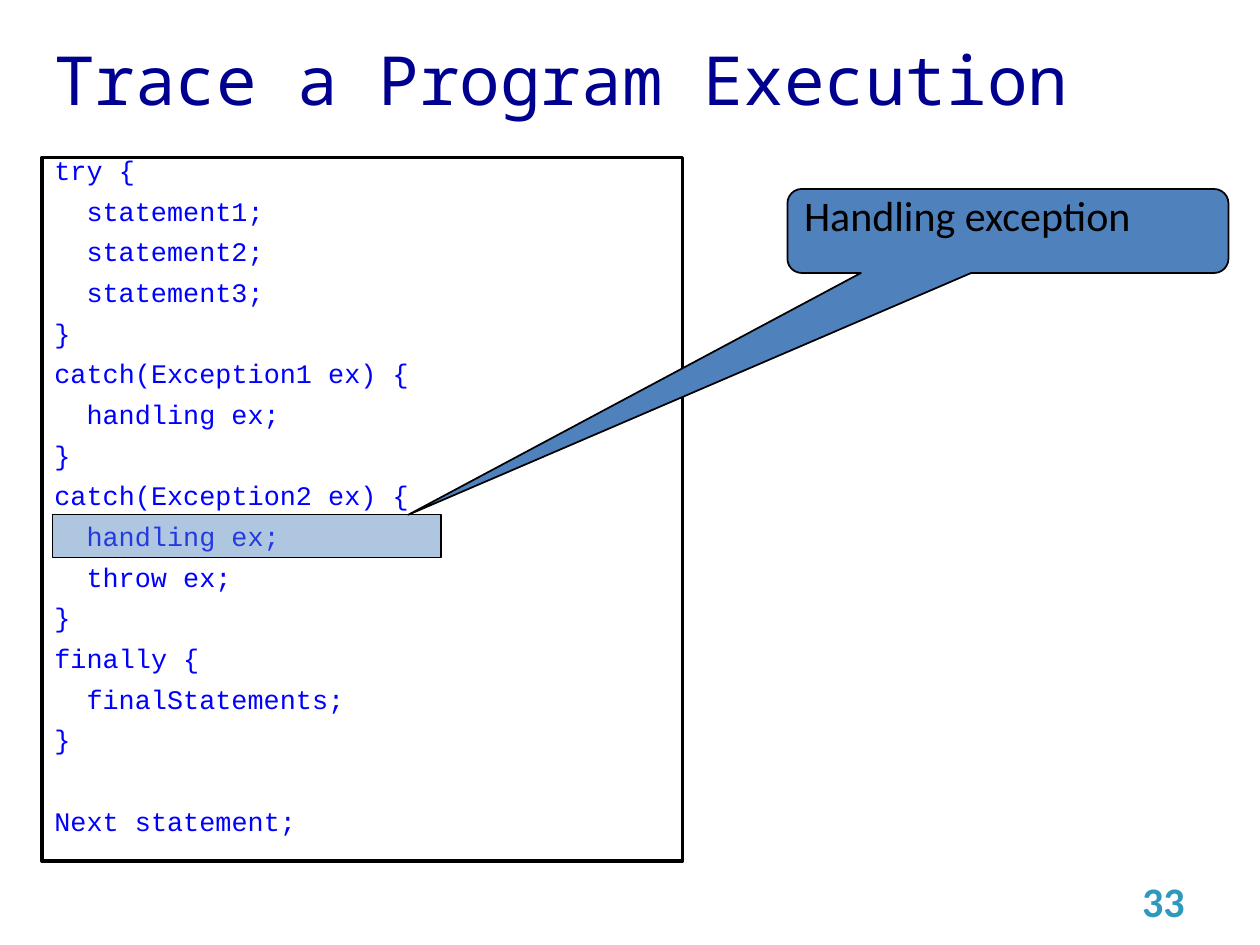
from dataclasses import dataclass

from lxml import etree
from pptx import Presentation
from pptx.dml.color import RGBColor
from pptx.enum.shapes import MSO_SHAPE
from pptx.enum.text import MSO_ANCHOR, PP_ALIGN
from pptx.oxml.ns import qn
from pptx.util import Inches, Pt

RECTANGLE = MSO_SHAPE.RECTANGLE
CALLOUT = MSO_SHAPE.ROUNDED_RECTANGULAR_CALLOUT
TOP, MIDDLE = MSO_ANCHOR.TOP, MSO_ANCHOR.MIDDLE
LEFT, RIGHT = PP_ALIGN.LEFT, PP_ALIGN.RIGHT

# The page is a grid of 120 columns by 90 rows
COLUMNS, ROWS = 120, 90
PAGE_WIDTH, PAGE_HEIGHT = Inches(10), Inches(7.5)

BLACK, WHITE, BLUE = "000000", "FFFFFF", "4F81BD"
CODE_SIZE = 15.3
CODE_SPACING = 0.65
CODE_GAP = 11.3
CODE_PITCH = 23.25
INDENT = 2 * 0.6 * CODE_SIZE  # two monospaced characters


@dataclass(frozen=True)
class Area:
    column: float
    row: float
    columns: float
    rows: float

    def lengths(self) -> tuple[int, int, int, int]:
        across, down = PAGE_WIDTH / COLUMNS, PAGE_HEIGHT / ROWS
        return (round(self.column * across), round(self.row * down),
                round(self.columns * across), round(self.rows * down))


@dataclass(frozen=True)
class CodeLine:
    text: str
    level: int = 0
    blank_lines_after: int = 0


CODE = [
    CodeLine("try {"),
    CodeLine("statement1;", 1),
    CodeLine("statement2;", 1),
    CodeLine("statement3;", 1),
    CodeLine("}"),
    CodeLine("catch(Exception1 ex) {"),
    CodeLine("handling ex;", 1),
    CodeLine("}"),
    CodeLine("catch(Exception2 ex) {"),
    CodeLine("handling ex;", 1),
    CodeLine("throw ex;", 1),
    CodeLine("}"),
    CodeLine("finally {"),
    CodeLine("finalStatements;", 1),
    CodeLine("}", blank_lines_after=1),
    CodeLine("Next statement;"),
]


def color(value: str) -> RGBColor:
    return RGBColor.from_string(value)


def add_box(page, kind, area: Area, fill: str, line_width: float, opacity: int = 100):
    box = page.shapes.add_shape(kind, *area.lengths())
    box.shadow.inherit = False
    box.fill.solid()
    box.fill.fore_color.rgb = color(fill)
    box.line.color.rgb = color(BLACK)
    box.line.width = Pt(line_width)
    if opacity < 100:
        fill_color = box.fill._xPr.find(qn("a:solidFill"))[0]
        etree.SubElement(fill_color, qn("a:alpha")).set("val", str(opacity * 1000))
    return box


def prepare_frame(box, anchor):
    frame = box.text_frame
    frame.word_wrap = True
    frame.vertical_anchor = anchor
    return frame


def write(para, text: str, *, font: str, size: float, ink: str, bold: bool = False,
          align=LEFT, spacing: float = 1.0, after: float = 0, indent: float = 0) -> None:
    para.alignment = align
    para.line_spacing = spacing
    para.space_after = Pt(after)
    if indent:
        para._p.get_or_add_pPr().set("marL", str(Pt(indent)))
    span = para.add_run()
    span.text = text
    span.font.name = font
    span.font.size = Pt(size)
    span.font.bold = bold
    span.font.color.rgb = color(ink)


def add_label(page, area: Area, text: str, **text_format) -> None:
    box = page.shapes.add_textbox(*area.lengths())
    write(prepare_frame(box, MIDDLE).paragraphs[0], text, **text_format)


def add_code(page, area: Area, lines: list[CodeLine]) -> None:
    frame = prepare_frame(add_box(page, RECTANGLE, area, WHITE, 2), TOP)
    for number, line in enumerate(lines):
        para = frame.add_paragraph() if number else frame.paragraphs[0]
        write(para, line.text, font="Courier New", size=CODE_SIZE, ink="0000FF",
              spacing=CODE_SPACING, indent=line.level * INDENT,
              after=CODE_GAP + line.blank_lines_after * CODE_PITCH)


def add_callout(page, area: Area, text: str, adjustments: tuple[float, ...]) -> None:
    box = add_box(page, CALLOUT, area, BLUE, 1)
    for number, value in enumerate(adjustments):
        box.adjustments[number] = value
    write(prepare_frame(box, TOP).paragraphs[0], text,
          font="Calibri", size=24, ink=BLACK, spacing=0.8)


def main() -> None:
    deck = Presentation()
    deck.slide_width, deck.slide_height = PAGE_WIDTH, PAGE_HEIGHT
    page = deck.slides.add_slide(deck.slide_layouts[6])

    # Title
    add_label(page, Area(4, 4, 107, 7), "Trace a Program Execution",
              font="Noto Sans Mono", size=38.7, ink="000090")

    # Program, callout and the highlighted statement
    add_code(page, Area(4, 15, 61, 67), CODE)
    add_callout(page, Area(75, 18, 42, 8), "Handling exception", (-1.36, 3.38, 0.17))
    add_box(page, RECTANGLE, Area(5, 49, 37, 4.1), BLUE, 1, opacity=45)

    # Page number
    add_label(page, Area(86, 83.4, 28, 4.8), "33",
              font="Calibri", size=24, ink="2E98BD", bold=True, align=RIGHT)

    deck.save("out.pptx")


if __name__ == "__main__":
    main()
